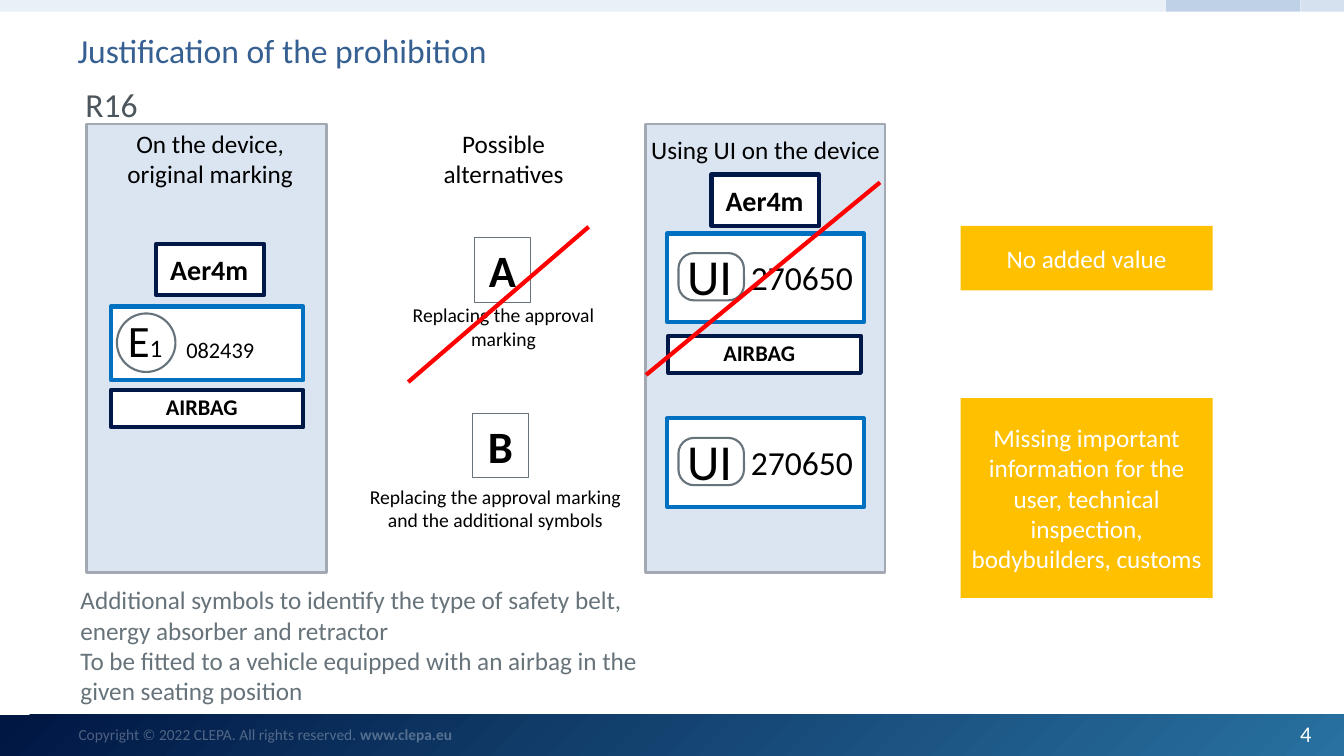
from lxml.etree import SubElement
from pptx import Presentation
from pptx.dml.color import RGBColor
from pptx.enum.shapes import MSO_CONNECTOR, MSO_SHAPE
from pptx.enum.text import MSO_ANCHOR, PP_ALIGN
from pptx.oxml.ns import qn
from pptx.util import Pt

TONES = {
    "white": "FFFFFF", "black": "000000", "title": "366092", "head": "4D565C",
    "grey": "67737A", "panel": "DBE5F1", "edge": "A2A9B2", "navy": "001848",
    "blue": "0070C0", "gold": "FFC000", "red": "FF0000", "pale": "EAF0F7",
    "mid": "BFD1E7", "light": "D5E1EF", "teal": "2871A0", "dark": "001643",
}
LEFT, MID, RIGHT = PP_ALIGN.LEFT, PP_ALIGN.CENTER, PP_ALIGN.RIGHT
TOP, HALF = MSO_ANCHOR.TOP, MSO_ANCHOR.MIDDLE


def tone(name):
    """Return the colour with the given name."""
    return RGBColor.from_string(TONES[name])


def put(item, values):
    """Set each attribute in values on item."""
    for key, value in values.items():
        setattr(item, key, value)


def add_run(para, text, size, hue="black", bold=False):
    """Add a formatted run to a paragraph."""
    run = para.add_run()
    run.text = text
    put(run.font, {"name": "Calibri", "size": Pt(size), "bold": bold})
    run.font.color.rgb = tone(hue)
    return run


def write(shape, lines, size, hue="black", align=MID, anchor=TOP, bold=False):
    """Fill a shape with one paragraph per line."""
    frame = shape.text_frame
    put(frame, {"word_wrap": True, "vertical_anchor": anchor})
    for num, line in enumerate(lines):
        para = frame.add_paragraph() if num else frame.paragraphs[0]
        para.alignment = align
        add_run(para, line, size, hue, bold)
    return frame.paragraphs[0]


def label(slide, box, lines, size, **style):
    """Add a text box and return its first paragraph."""
    return write(slide.shapes.add_textbox(*map(Pt, box)), lines, size, **style)


def block(slide, box, fill=None, edge=None, width=1, kind=MSO_SHAPE.RECTANGLE):
    """Add a flat shape with optional fill and outline."""
    shape = slide.shapes.add_shape(kind, *map(Pt, box))
    shape.shadow.inherit = False
    if fill:
        shape.fill.solid()
        shape.fill.fore_color.rgb = tone(fill)
    else:
        shape.fill.background()
    if edge:
        shape.line.color.rgb = tone(edge)
        shape.line.width = Pt(width)
    else:
        shape.line.fill.background()
    return shape


def strike(slide, ends):
    """Add a red line between two points."""
    line = slide.shapes.add_connector(MSO_CONNECTOR.STRAIGHT, *map(Pt, ends))
    line.line.color.rgb = tone("red")
    line.line.width = Pt(3)
    SubElement(line._element.spPr, qn("a:effectLst"))


def footer(slide):
    """Add the gradient bar, copyright line and page number."""
    bar = block(slide, (0, 510.5, 960, 29.5), "dark")
    bar.fill.gradient()
    for stop, hue in zip(bar.fill.gradient_stops, ("teal", "dark")):
        stop.color.rgb = tone(hue)
    for stop, place in zip(bar.fill.gradient_stops, (0, 1)):
        stop.position = place
    grad = bar._element.spPr.find(qn("a:gradFill"))
    grad.remove(grad.find(qn("a:lin")))
    path = SubElement(grad, qn("a:path"), {"path": "circle"})
    SubElement(path, qn("a:fillToRect"), {"l": "100000", "t": "100000"})
    para = label(slide, (49, 514, 301.7, 20.9),
                 ["Copyright © 2022 CLEPA. All rights reserved. "], 11,
                 hue="white", align=LEFT, anchor=HALF)
    add_run(para, "www.clepa.eu", 11, "white", True)
    for run in para.runs:
        hue = run._r.find(".//" + qn("a:srgbClr"))
        SubElement(hue, qn("a:alpha"), {"val": "30000"})
    label(slide, (892.1, 509.8, 51.8, 28.8), ["4"], 16, hue="white",
          align=RIGHT, anchor=HALF)


def heading(slide):
    """Format the title and add the section name."""
    title = slide.shapes.title
    put(title, dict(zip(("left", "top", "width", "height"),
                        map(Pt, (48.2, 18, 755.3, 33.1)))))
    title.fill.solid()
    title.fill.fore_color.rgb = tone("white")
    write(title, ["Justification of the prohibition"], 24, "title", LEFT)
    label(slide, (54, 56.2, 60.5, 33.8), ["R16"], 24, hue="head", align=LEFT)


def belt(slide, left, top):
    """Add the belt type symbol."""
    block(slide, (left, top, 77, 36.7), "white", "navy", 3)
    label(slide, (left + 2.2, top + 2.9, 71.3, 31.7), ["Aer4m"], 20, bold=True)


def airbag(slide, left, top):
    """Add the airbag symbol."""
    block(slide, (left, top, 137.5, 26.6), "white", "navy", 3)
    label(slide, (left - 1, top - 1, 131.8, 26.6), ["AIRBAG"], 16, bold=True)


def unique(slide, top):
    """Add a unique identifier marking."""
    block(slide, (476.6, top, 140.4, 63.4), "white", "blue", 3)
    ring = block(slide, (484.6, top + 14, 46.8, 33.8), "white", "grey", 1.5,
                 MSO_SHAPE.ROUNDED_RECTANGLE)
    ring.adjustments[0] = 0.33
    label(slide, (478.1, top + 4.7, 57.6, 51.1), ["UI"], 36)
    label(slide, (529.2, top + 13.2, 104.4, 36), ["270650"], 24, align=LEFT)


def approval(slide):
    """Add the approval marking with its country code."""
    block(slide, (79.2, 218.9, 137.5, 52.6), "white", "blue", 3)
    para = label(slide, (84.2, 219.6, 44.6, 46.1), ["E"], 32, align=LEFT)
    add_run(para, "1", 18)
    block(slide, (83.5, 223.9, 41.8, 41.8), None, "grey", 1.5, MSO_SHAPE.OVAL)
    para = label(slide, (126, 226.1, 96.5, 34.6), ["082439"], 16, align=LEFT)
    para.line_spacing = Pt(30)


def choice(slide, letter, box, text, place):
    """Add a lettered alternative with its caption."""
    write(block(slide, box, None, "grey", 0.75), [letter], 32, bold=True)
    label(slide, place, [text], 14)


def main():
    """Build the slide and save it."""
    deck = Presentation()
    put(deck, {"slide_width": Pt(960), "slide_height": Pt(540)})
    slide = deck.slides.add_slide(deck.slide_layouts[5])
    footer(slide)
    for left, width, hue in ((0, 833, "pale"), (833, 95.8, "mid"),
                             (928.8, 31.2, "light")):
        block(slide, (left, 0, width, 8.4), hue)
    for left in (61.9, 460.8):
        block(slide, (left, 88.6, 171.4, 320.4), "panel", "edge", 2)
    heading(slide)

    label(slide, (81.4, 87.8, 137.5, 51.1),
          ["On the device,", "original marking"], 18)
    label(slide, (290.9, 87.8, 137.5, 51.1), ["Possible alternatives"], 18)
    label(slide, (448.6, 92.2, 196.6, 28.8), ["Using UI on the device"], 18)

    belt(slide, 111.6, 174.2)
    approval(slide)
    airbag(slide, 79.2, 278.6)

    choice(slide, "A", (339.1, 169.9, 39.6, 46.1),
           "Replacing the approval marking", (275.8, 213.1, 167.8, 41))
    choice(slide, "B", (337.7, 295.2, 39.6, 46.1),
           "Replacing the approval marking and the additional symbols",
           (252, 342.7, 203.8, 41))

    belt(slide, 508.3, 124.6)
    for top in (166.8, 298.8):
        unique(slide, top)
    airbag(slide, 477.4, 239.8)
    for ends in ((291.6, 272.9, 420.5, 162), (461.5, 267.8, 628.6, 130.3)):
        strike(slide, ends)

    for top, height, text in (
            (161.3, 46.1, "No added value"),
            (284.4, 142.6, "Missing important information for the user, "
             "technical inspection, bodybuilders, customs")):
        note = block(slide, (686.2, top, 180, height), "gold")
        write(note, [text], 18, "white", anchor=HALF)
    label(slide, (50.4, 414, 440.6, 94.3),
          ["Additional symbols to identify the type of safety belt, "
           "energy absorber and retractor",
           "To be fitted to a vehicle equipped with an airbag in the "
           "given seating position"], 18, hue="grey", align=LEFT)
    deck.save("out.pptx")


if __name__ == "__main__":
    main()
